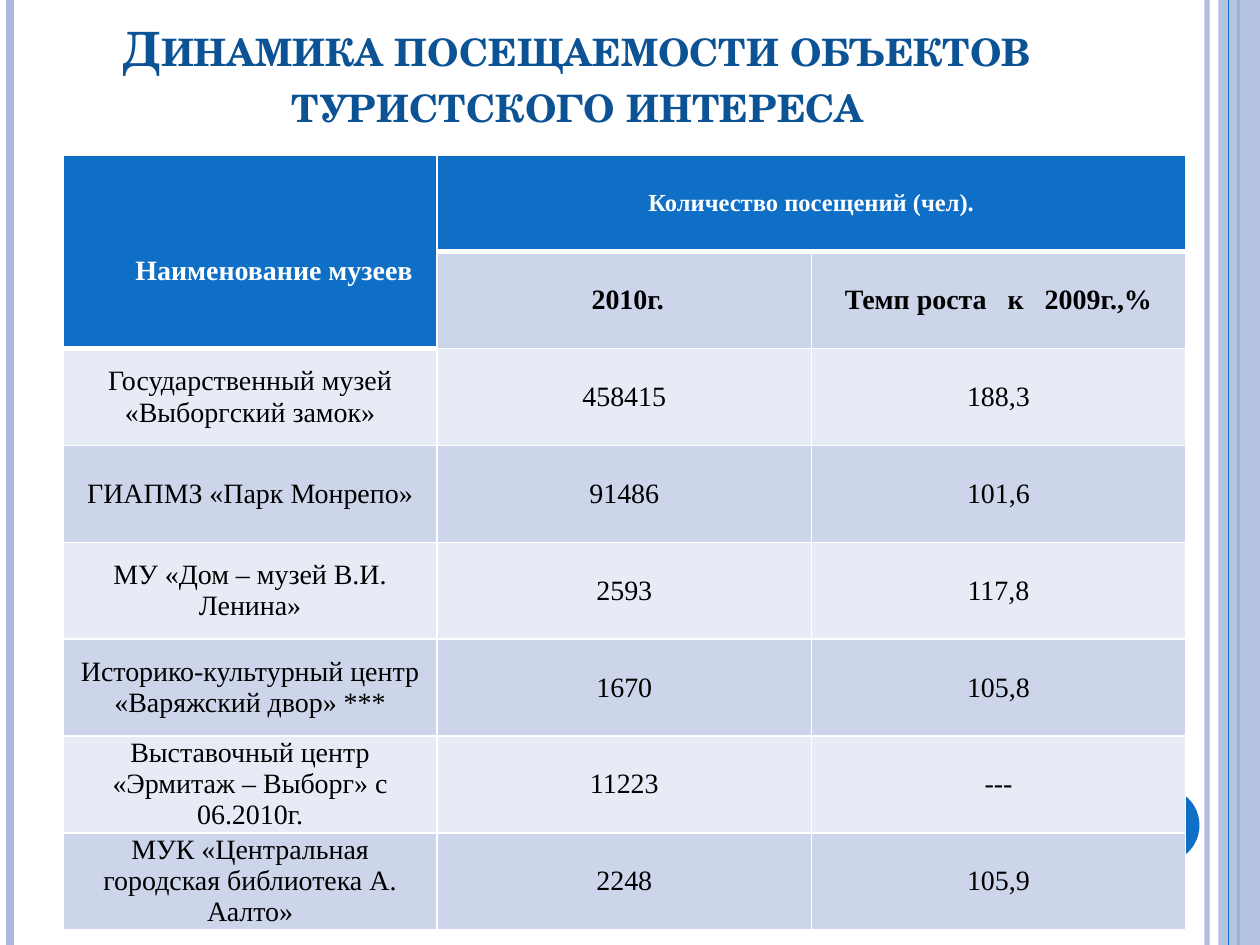
"""Builds a slide with a table of museum attendance figures."""
from lxml import etree
from pptx import Presentation
from pptx import util as u
from pptx.dml.color import RGBColor
from pptx.enum import shapes, text
from pptx.oxml.ns import qn

WHITE = RGBColor(0xFF, 0xFF, 0xFF)
BLACK = RGBColor(0x00, 0x00, 0x00)
BLUE = RGBColor(0x0F, 0x6F, 0xC6)
TITLE_BLUE = RGBColor(0x0B, 0x53, 0x94)
LAVENDER = RGBColor(0xAB, 0xBB, 0xDF)
BANDS = (RGBColor(0xE7, 0xEB, 0xF5), RGBColor(0xCC, 0xD5, 0xEA))

MUSEUMS = [
    ("Государственный музей «Выборгский замок»", "458415", "188,3"),
    ("ГИАПМЗ «Парк Монрепо»", "91486", "101,6"),
    ("МУ «Дом – музей В.И. Ленина»", "2593", "117,8"),
    ("Историко-культурный центр «Варяжский двор» ***", "1670", "105,8"),
    ("Выставочный центр «Эрмитаж – Выборг» с 06.2010г.", "11223", "---"),
    ("МУК «Центральная городская библиотека А. Аалто»", "2248", "105,9"),
]
ROWS = [
    ("Наименование музеев", "Количество посещений (чел).", ""),
    ("", " 2010г.", "Темп роста   к   2009г.,%"),
    *MUSEUMS,
]


class SlideBuilder:
    title_font = "TeX Gyre Schola"
    body_font = "Times New Roman"

    def __init__(self, slide):
        self.slide = slide

    def add_alpha(self, fill_parent, percent):
        color = next(fill_parent.iter(qn("a:srgbClr")))
        etree.SubElement(color, qn("a:alpha")).set("val", str(percent * 1000))

    def add_run(self, paragraph, words, font, size, color, bold=False):
        run = paragraph.add_run()
        run.text = words
        run.font.name = font
        run.font.size = u.Pt(size)
        run.font.bold = bold
        run.font.color.rgb = color
        return run

    def stripe(self, x, width, color, opacity=100):
        x = u.Inches(x)
        line = self.slide.shapes.add_connector(
            shapes.MSO_CONNECTOR.STRAIGHT, x, 0, x, u.Inches(7.5))
        line.line.color.rgb = color
        line.line.width = u.Pt(width)
        properties = line._element.spPr
        if opacity < 100:
            self.add_alpha(properties, opacity)
        etree.SubElement(properties, qn("a:effectLst"))

    def shape(self, kind, left, top, width, height, color, opacity=100):
        shape = self.slide.shapes.add_shape(
            kind, *map(u.Inches, (left, top, width, height)))
        shape.shadow.inherit = False
        shape.fill.solid()
        shape.fill.fore_color.rgb = color
        shape.line.fill.background()
        if opacity < 100:
            self.add_alpha(shape._element.spPr, opacity)

    def title(self, words):
        title = self.slide.shapes.title
        title.left, title.top = u.Inches(0.5), u.Inches(0.3)
        title.width, title.height = u.Inches(8.17), u.Inches(1.25)
        frame = title.text_frame
        frame.word_wrap = True
        frame.auto_size = text.MSO_AUTO_SIZE.NONE
        frame.vertical_anchor = text.MSO_ANCHOR.BOTTOM
        frame.margin_bottom = u.Inches(0.5)
        paragraph = frame.paragraphs[0]
        paragraph.alignment = text.PP_ALIGN.CENTER
        run = self.add_run(paragraph, words, self.title_font, 27, TITLE_BLUE, True)
        run.font._element.set("cap", "small")

    def borders(self, cell, top, bottom):
        properties = cell._tc.get_or_add_tcPr()
        for index, (side, width) in enumerate(
                (("lnL", 1), ("lnR", 1), ("lnT", top), ("lnB", bottom))):
            line = etree.Element(qn(f"a:{side}"), w=str(u.Pt(width)))
            fill = etree.SubElement(line, qn("a:solidFill"))
            etree.SubElement(fill, qn("a:srgbClr")).set("val", str(WHITE))
            properties.insert(index, line)

    def cell(self, cell, words, fill, size, color, bold):
        cell.fill.solid()
        cell.fill.fore_color.rgb = fill
        cell.vertical_anchor = text.MSO_ANCHOR.MIDDLE
        cell.margin_left = cell.margin_right = u.Inches(0.07)
        cell.margin_top = cell.margin_bottom = 0
        if words:
            paragraph = cell.text_frame.paragraphs[0]
            paragraph.alignment = text.PP_ALIGN.CENTER
            paragraph.space_after = u.Pt(6)
            self.add_run(paragraph, words, self.body_font, size, color, bold)

    def table(self, rows, left, top, width, height):
        table = self.slide.shapes.add_table(
            len(rows), len(rows[0]),
            *map(u.Inches, (left, top, width, height))).table
        for row, values in enumerate(rows):
            for column, words in enumerate(values):
                cell = table.cell(row, column)
                header_end = 1 if column == 0 else 0
                is_header = row <= header_end
                self.cell(
                    cell, words,
                    BLUE if is_header else BANDS[row % 2],
                    14 if row == 0 and column else 16,
                    WHITE if is_header else BLACK,
                    row < 2)
                self.borders(cell, 3 if row == header_end + 1 else 1,
                             3 if row == header_end else 1)
        museum_header = table.cell(0, 0)
        museum_header.merge(table.cell(1, 0))
        museum_header.margin_top = u.Inches(0.31)
        indent = museum_header.text_frame.paragraphs[0]._p.get_or_add_pPr()
        indent.set("indent", str(u.Inches(0.38)))
        table.cell(0, 1).merge(table.cell(0, 2))


def main():
    deck = Presentation()
    deck.slide_width, deck.slide_height = u.Inches(10), u.Inches(7.5)
    builder = SlideBuilder(deck.slides.add_slide(deck.slide_layouts[5]))
    builder.stripe(9.58, 3, LAVENDER, 93)
    builder.stripe(0.08, 4.5, LAVENDER)
    builder.stripe(9.83, 1.5, BLUE)
    builder.shape(shapes.MSO_SHAPE.RECTANGLE, 9.67, 0, 0.33, 7.5, LAVENDER, 87)
    builder.stripe(9.75, 0.75, BLUE)
    builder.shape(shapes.MSO_SHAPE.OVAL, 8.92, 6.25, 0.6, 0.6, BLUE)
    builder.title("Динамика посещаемости объектов туристского интереса")
    builder.table(ROWS, 0.5, 1.23, 8.91, 6.15)
    deck.save("out.pptx")


if __name__ == "__main__":
    main()
